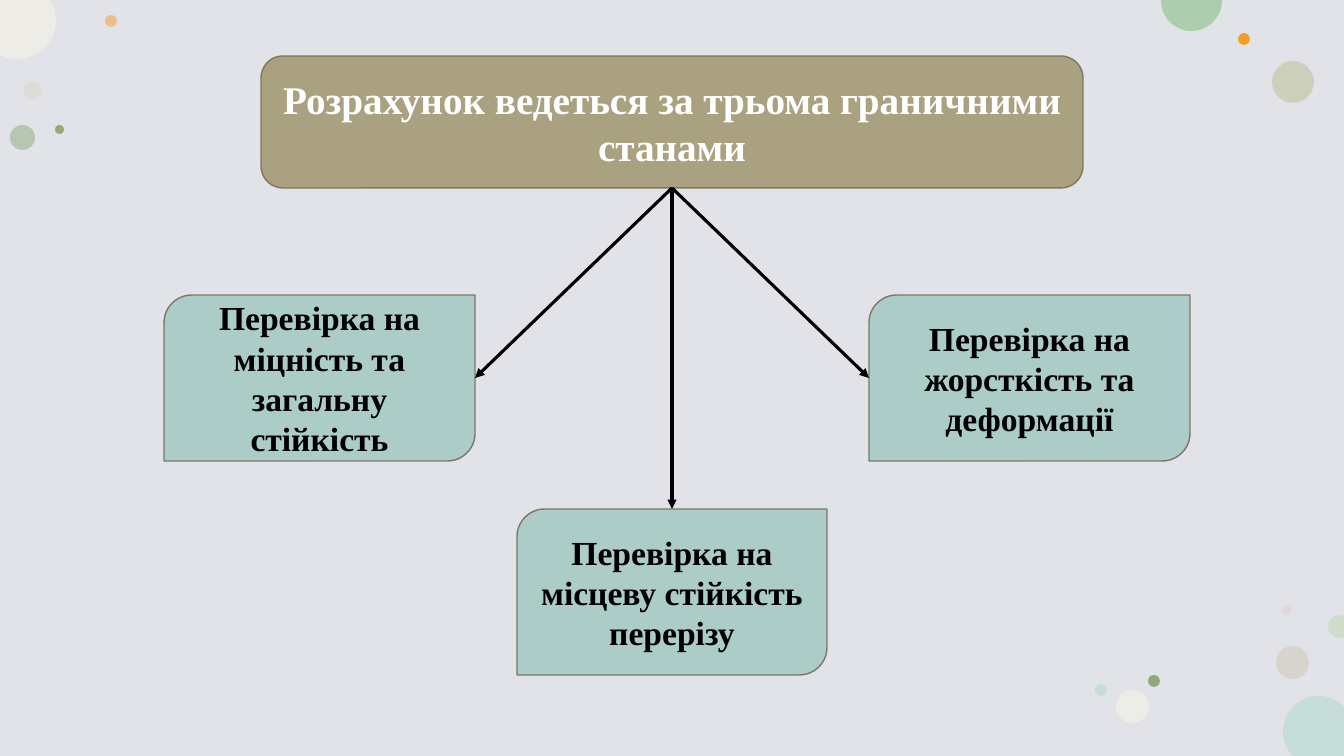
from math import cos, radians, sin, tan

from pptx import Presentation
from pptx.dml.color import RGBColor
from pptx.enum.dml import MSO_LINE
from pptx.enum.shapes import MSO_CONNECTOR, MSO_SHAPE
from pptx.enum.text import MSO_ANCHOR, MSO_AUTO_SIZE, PP_ALIGN
from pptx.oxml.ns import qn
from pptx.util import Pt
from lxml.etree import SubElement

PX = 914400 / 100.8
WIDE, HIGH = 1344, 756

THEME = {
    "font": "Times New Roman", "back": "E2E3E8",
    "head": "AAA180", "card": "ACCCC7", "edge": "7E775F",
    "light": "FFFFFF", "dark": "000000",
    "title": 28, "body": 24, "thin": 1, "thick": 2.25,
}

TITLE = "Розрахунок ведеться за трьома граничними станами"
HEAD = (261, 56, 822, 132)

# text, box, connection site and its place as a share of the box
CHECKS = [
    ("Перевірка на міцність та загальну стійкість", (164, 295, 311, 166), 0, (1, 0.5)),
    ("Перевірка на місцеву стійкість перерізу", (517, 509, 310, 166), 3, (0.5, 0)),
    ("Перевірка на жорсткість та деформації", (869, 295, 321, 166), 2, (0, 0.5)),
]

# left, top, diameter, colour, opacity in percent
DOTS = [
    (23, 81, 19, "D7DBC6", 50), (105, 15, 12, "F39E29", 50),
    (1276, 646, 33, "CCC7B3", 50), (10, 125, 25, "8FA880", 50),
    (1272, 61, 42, "C4CAAA", 72), (1238, 33, 12, "F39E29", 100),
    (1282, 605, 10, "E3BEBE", 28), (1148, 675, 12, "8FA880", 100),
    (1116, 690, 33, "EEECE6", 100), (1095, 684, 12, "C7DDDA", 100),
    (55, 125, 9, "9CA671", 100),
]

# left, top, diameter, colour, first and last degree of the arc, slide corners
CUTS = [
    (1283, 696, 71, "C7DDDA", 136, 316, [(WIDE, HIGH)]),
    (-22, -19, 78, "EEECE6", -31, 116, [(0, 0)]),
    (1161, -30, 61, "ADCEAE", -1, 181, []),
    (1328, 615, 23, "D2DCCC", 67, 293, []),
]


def emu(*sizes):
    return [round(size * PX) for size in sizes]


def paint(shape, fill, edge=None, alpha=100):
    shape.shadow.inherit = False
    shape.fill.solid()
    shape.fill.fore_color.rgb = RGBColor.from_string(fill)
    if alpha < 100:
        tint = shape._element.spPr.find(".//" + qn("a:srgbClr"))
        SubElement(tint, qn("a:alpha"), val=str(alpha * 1000))
    if edge:
        shape.line.color.rgb = RGBColor.from_string(edge)
        shape.line.width = Pt(THEME["thin"])
    else:
        shape.line.fill.background()


def write(shape, text, size, color):
    frame = shape.text_frame
    frame.word_wrap = True
    frame.auto_size = MSO_AUTO_SIZE.NONE
    frame.vertical_anchor = MSO_ANCHOR.MIDDLE
    frame.text = text
    line = frame.paragraphs[0]
    line.alignment = PP_ALIGN.CENTER
    font = line.runs[0].font
    font.name, font.size, font.bold = THEME["font"], Pt(size), True
    font.color.rgb = RGBColor.from_string(color)


def add_cut(shapes, left, top, size, color, first, last, corners):
    """Draw the part of a circle that lies on the slide, with true curves."""
    rad = size / 2

    def spot(turn, bend=0):
        """Give the point at an angle, moved along the tangent by bend radii."""
        turn = radians(turn)
        across = left + rad + rad * (cos(turn) - bend * sin(turn))
        down = top + rad + rad * (sin(turn) + bend * cos(turn))
        return emu(min(max(across, 0), WIDE), min(max(down, 0), HIGH))

    turns = [first, *(t for t in range(0, 360, 90) if first < t < last), last]
    outline = shapes.build_freeform(*spot(first))
    points = [spot(turn) for turn in turns[1:]] + [emu(*c) for c in corners]
    outline.add_line_segments(points, close=True)
    cut = outline.convert_to_shape()

    sides = list(cut._element.spPr.iter(qn("a:lnTo")))
    for side, start, end in zip(sides, turns, turns[1:]):
        bend = 4 / 3 * tan(radians(end - start) / 4)
        curve = SubElement(side.getparent(), qn("a:cubicBezTo"))
        for x, y in (spot(start, bend), spot(end, -bend), spot(end)):
            SubElement(curve, qn("a:pt"), x=str(x - cut.left), y=str(y - cut.top))
        side.getparent().replace(side, curve)
    paint(cut, color)


def add_arrow(shapes, head, card, site, spot):
    arrow = shapes.add_connector(MSO_CONNECTOR.STRAIGHT, 0, 0, 0, 0)
    arrow.begin_connect(head, 2)
    arrow.end_connect(card, site)
    arrow.end_x = round(card.left + card.width * spot[0])
    arrow.end_y = round(card.top + card.height * spot[1])
    arrow.line.color.rgb = RGBColor.from_string(THEME["dark"])
    arrow.line.width = Pt(THEME["thick"])
    arrow.line.dash_style = MSO_LINE.SOLID
    SubElement(arrow.line._get_or_add_ln(), qn("a:tailEnd"), type="triangle")
    SubElement(arrow._element.spPr, qn("a:effectLst"))


def main():
    deck = Presentation()
    deck.slide_width, deck.slide_height = emu(WIDE, HIGH)
    slide = deck.slides.add_slide(deck.slide_layouts[5])
    shapes = slide.shapes

    back = shapes.add_shape(MSO_SHAPE.RECTANGLE, *emu(0, 0, WIDE, HIGH))
    paint(back, THEME["back"])
    for left, top, size, color, alpha in DOTS:
        dot = shapes.add_shape(MSO_SHAPE.OVAL, *emu(left, top, size, size))
        paint(dot, color, alpha=alpha)
    for cut in CUTS:
        add_cut(shapes, *cut)

    head = shapes.add_shape(MSO_SHAPE.ROUNDED_RECTANGLE, *emu(*HEAD))
    paint(head, THEME["head"], THEME["edge"])
    title = shapes.title
    title.left, title.top, title.width, title.height = emu(*HEAD)
    write(title, TITLE, THEME["title"], THEME["light"])
    head._element.addnext(title._element)

    cards = []
    for text, box, site, spot in CHECKS:
        card = shapes.add_shape(MSO_SHAPE.ROUND_2_DIAG_RECTANGLE, *emu(*box))
        paint(card, THEME["card"], THEME["edge"])
        write(card, text, THEME["body"], THEME["dark"])
        cards.append((card, site, spot))
    for card, site, spot in cards:
        add_arrow(shapes, head, card, site, spot)

    deck.save("out.pptx")


if __name__ == "__main__":
    main()
